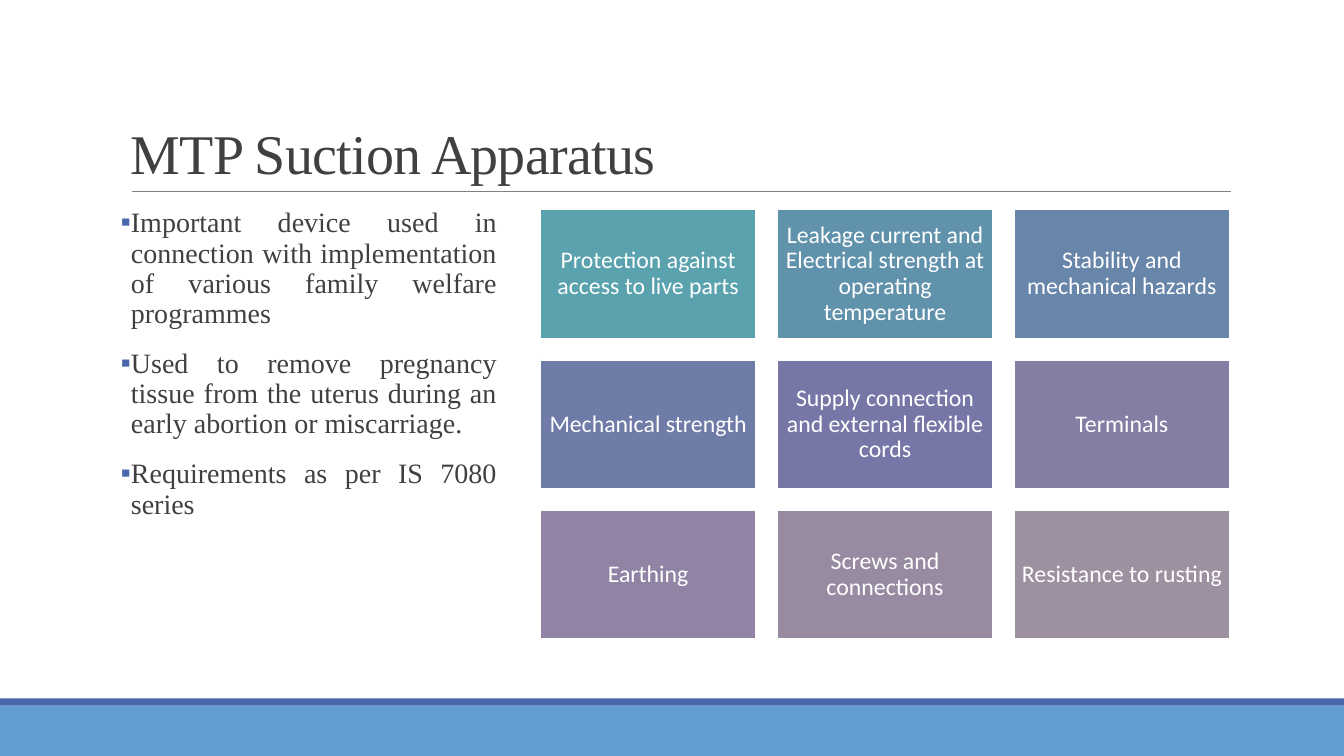
from lxml.etree import SubElement as Sub
from pptx import Presentation
from pptx.dml.color import RGBColor as Rgb
from pptx.enum.shapes import MSO_CONNECTOR as Link, MSO_SHAPE as Kind
from pptx.enum.text import MSO_ANCHOR as Anchor, PP_ALIGN as Align
from pptx.oxml.ns import qn
from pptx.util import Cm, Pt

WIDE, HIGH = 33.87, 19.05
SERIF, SANS = "Times New Roman", "Calibri"
COLORS = {
    "ink": "404040", "rule": "808080", "white": "FFFFFF",
    "navy": "4A66AC", "sky": "629DD1",
}
POINTS = [
    "Important device used in connection with implementation of various family welfare programmes",
    "Used to remove pregnancy tissue from the uterus during an early abortion or miscarriage.",
    "Requirements as per IS 7080 series",
]
TESTS = [
    ("Protection against access to live parts", "5AA2AE"),
    ("Leakage current and Electrical strength at operating temperature", "6192AC"),
    ("Stability and mechanical hazards", "6885AA"),
    ("Mechanical strength", "6F7CA8"),
    ("Supply connection and external flexible cords", "7677A6"),
    ("Terminals", "847DA4"),
    ("Earthing", "9083A3"),
    ("Screws and connections", "988AA1"),
    ("Resistance to rusting", "9D90A0"),
]


def tint(name):
    return Rgb.from_string(COLORS.get(name, name))


def mark(para, color, indent):
    """Give the paragraph a hanging square bullet."""
    props = para._p.get_or_add_pPr()
    props.set("marL", str(indent))
    props.set("indent", str(-indent))
    Sub(Sub(props, qn("a:buClr")), qn("a:srgbClr")).set("val", COLORS[color])
    Sub(props, qn("a:buFont")).set("typeface", SANS)
    Sub(props, qn("a:buChar")).set("char", "▪")


def write(shape, lines, size, font=SERIF, color="ink", align=Align.LEFT,
          anchor=Anchor.TOP, pads=(0.25, 0.13), lead=0.9, before=0, after=0,
          track=None, bullet=None):
    """Fill a shape with paragraphs, one for each line."""
    frame = shape.text_frame
    frame.word_wrap = True
    frame.vertical_anchor = anchor
    frame.margin_left = frame.margin_right = Cm(pads[0])
    frame.margin_top = frame.margin_bottom = Cm(pads[1])
    for i, line in enumerate(lines):
        para = frame.add_paragraph() if i else frame.paragraphs[0]
        para.alignment = align
        para.line_spacing = lead
        para.space_before, para.space_after = Pt(before), Pt(after)
        if bullet:
            mark(para, bullet, Cm(0.25))
        run = para.add_run()
        run.text = line
        run.font.name, run.font.size = font, Pt(size)
        run.font.color.rgb = tint(color)
        if track:
            run._r.get_or_add_rPr().set("spc", str(track))


class Deck:
    def __init__(self):
        self.file = Presentation()
        self.file.slide_width, self.file.slide_height = Cm(WIDE), Cm(HIGH)
        self.slide = self.file.slides.add_slide(self.file.slide_layouts[6])

    def rect(self, x, y, w, h, fill, edge=None):
        box = self.slide.shapes.add_shape(Kind.RECTANGLE, Cm(x), Cm(y), Cm(w), Cm(h))
        box.shadow.inherit = False
        box.fill.solid()
        box.fill.fore_color.rgb = tint(fill)
        if edge:
            box.line.color.rgb = tint(edge)
            box.line.width = Pt(1.25)
        else:
            box.line.fill.background()
        return box

    def rule(self, x, y, end, color):
        line = self.slide.shapes.add_connector(Link.STRAIGHT, Cm(x), Cm(y), Cm(end), Cm(y))
        line.line.color.rgb = tint(color)
        line.line.width = Pt(0.5)
        Sub(line._element.spPr, qn("a:effectLst"))

    def text(self, x, y, w, h, lines, size, **style):
        box = self.slide.shapes.add_textbox(Cm(x), Cm(y), Cm(w), Cm(h))
        write(box, lines, size, **style)

    def grid(self, x, y, w, h, gap, items, cols=3):
        for i, (label, fill) in enumerate(items):
            row, col = divmod(i, cols)
            tile = self.rect(x + col * (w + gap), y + row * (h + gap), w, h, fill, "white")
            write(tile, [label], 17, font=SANS, color="white", align=Align.CENTER,
                  anchor=Anchor.MIDDLE, pads=(0.17, 0.17))


def main():
    deck = Deck()
    deck.rect(0, 17.78, WIDE, 1.27, "sky")
    deck.rect(0, 17.6, WIDE, 0.18, "navy")
    deck.rule(3.33, 4.83, 31.01, "rule")
    deck.text(3.05, 0.79, 27.94, 4.03, ["MTP Suction Apparatus"], 40,
              anchor=Anchor.BOTTOM, lead=0.85, track=-50)
    deck.text(3.05, 5.13, 9.47, 11.18, POINTS, 20, align=Align.JUSTIFY,
              pads=(0, 0.13), before=12, after=2, bullet="navy")
    deck.grid(13.62, 5.28, 5.43, 3.25, 0.54, TESTS)
    deck.file.save("out.pptx")


if __name__ == "__main__":
    main()
